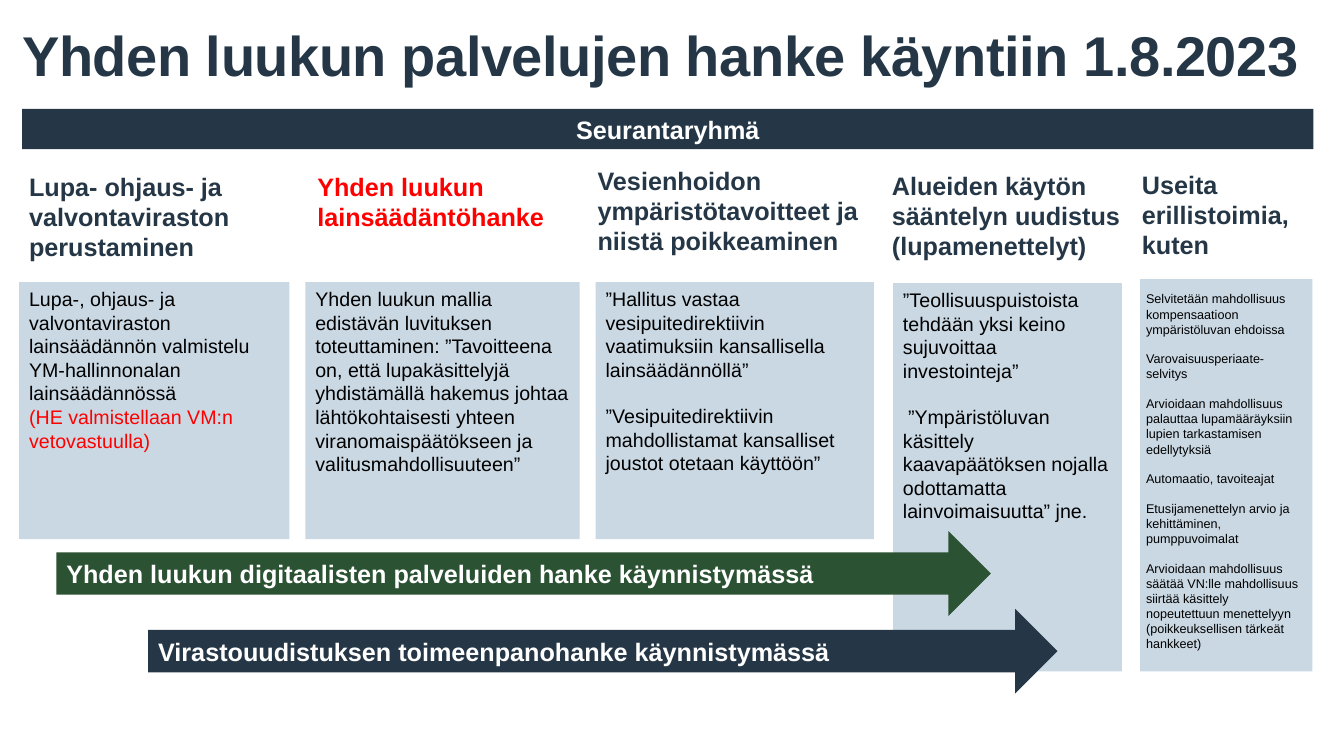
from dataclasses import dataclass
from pptx import Presentation
from pptx import util as u
from pptx.dml.color import RGBColor
from pptx.enum import shapes, text

CELL = 0.1
SLIDE_COLUMNS, SLIDE_ROWS = 133.33, 75
LINE_FACTOR = 1.15


@dataclass(frozen=True)
class Theme:
    font: str = "Arial"
    navy: str = "253746"
    green: str = "2C5234"
    pale: str = "CAD8E3"
    red: str = "FF0000"
    black: str = "000000"
    white: str = "FFFFFF"
    title: int = 40
    heading: int = 18
    body: int = 14
    small: int = 9


THEME = Theme()
INSETS = (1, 0.5, 1, 0.5)

COLUMNS = [
    ((1.9, 16.5, 26.7, 10.1), "Lupa- ohjaus- ja valvontaviraston perustaminen", THEME.navy,
     (1.9, 28, 26.8, 25.5),
     ["Lupa-, ohjaus- ja valvontaviraston lainsäädännön valmistelu "
      "YM-hallinnonalan lainsäädännössä",
      "(HE valmistellaan VM:n vetovastuulla)"],
     {"gap": 0, "accents": {1: THEME.red}}),
    ((30.5, 16.5, 26, 7.1), "Yhden luukun lainsäädäntöhanke", THEME.red,
     (30.3, 28, 27.2, 25.5),
     ["Yhden luukun mallia edistävän luvituksen toteuttaminen: ”Tavoitteena on, "
      "että lupakäsittelyjä yhdistämällä hakemus johtaa lähtökohtaisesti yhteen "
      "viranomaispäätökseen ja valitusmahdollisuuteen”"], {}),
    ((58.3, 15.9, 28.2, 10.1), "Vesienhoidon ympäristötavoitteet ja niistä poikkeaminen",
     THEME.navy, (59.1, 28, 27.6, 25.5),
     ["”Hallitus vastaa vesipuitedirektiivin vaatimuksiin kansallisella lainsäädännöllä”",
      "”Vesipuitedirektiivin mahdollistamat kansalliset joustot otetaan käyttöön”"], {}),
    ((87.5, 16.4, 25.5, 10.1), "Alueiden käytön sääntelyn uudistus (lupamenettelyt)",
     THEME.navy, (88.6, 28.1, 22.7, 38.5),
     ["”Teollisuuspuistoista tehdään yksi keino sujuvoittaa investointeja”",
      "”Ympäristöluvan käsittely kaavapäätöksen nojalla odottamatta "
      "lainvoimaisuutta” jne."], {"indents": {1: 0.5}}),
    ((112.3, 16.3, 17.1, 10.1), "Useita erillistoimia, kuten", THEME.navy,
     (113.1, 27.7, 17.1, 38.9),
     ["Selvitetään mahdollisuus kompensaatioon ympäristöluvan ehdoissa",
      "Varovaisuusperiaate-selvitys",
      "Arvioidaan mahdollisuus palauttaa lupamääräyksiin lupien tarkastamisen edellytyksiä",
      "Automaatio, tavoiteajat",
      "Etusijamenettelyn arvio ja kehittäminen, pumppuvoimalat",
      "Arvioidaan mahdollisuus säätää VN:lle mahdollisuus siirtää käsittely "
      "nopeutettuun menettelyyn (poikkeuksellisen tärkeät hankkeet)"],
     {"size": THEME.small, "insets": (0.6, 1.2, 0.9, 0.5)}),
]

ARROWS = [
    ((5.6, 52.7, 92.7, 8.4), "Yhden luukun digitaalisten palveluiden hanke käynnistymässä",
     THEME.green),
    ((14.7, 60.4, 90.2, 8.4), "Virastouudistuksen toimeenpanohanke käynnistymässä",
     THEME.navy),
]


def grid(cells):
    return u.Inches(cells * CELL)


def apply(target, values):
    for attribute, value in values.items():
        setattr(target, attribute, value)


def write(shape, paragraphs, size, color, bold=False, gap=1, insets=INSETS,
          anchor=text.MSO_ANCHOR.TOP, align=text.PP_ALIGN.LEFT, wrap=True,
          accents={}, indents={}):
    frame = shape.text_frame
    sides = ("margin_left", "margin_top", "margin_right", "margin_bottom")
    apply(frame, {"word_wrap": wrap, "vertical_anchor": anchor,
                  **{side: grid(inset) for side, inset in zip(sides, insets)}})
    for index, wording in enumerate(paragraphs):
        paragraph = frame.add_paragraph() if index else frame.paragraphs[0]
        paragraph.alignment = align
        if index and gap:
            paragraph.space_before = u.Pt(round(gap * size * LINE_FACTOR, 1))
        if index in indents:
            paragraph._p.get_or_add_pPr().set("indent", str(grid(indents[index])))
        run = paragraph.add_run()
        run.text = wording
        apply(run.font, {"name": THEME.font, "size": u.Pt(size), "bold": bold})
        run.font.color.rgb = RGBColor.from_string(accents.get(index, color))
    return frame


def add_block(slide, area, fill, preset=shapes.MSO_SHAPE.RECTANGLE):
    block = slide.shapes.add_shape(preset, *map(grid, area))
    block.shadow.inherit = False
    block.fill.solid()
    block.fill.fore_color.rgb = RGBColor.from_string(fill)
    block.line.fill.background()
    return block


def add_title(slide, area, wording):
    title = slide.shapes.add_textbox(*map(grid, area))
    frame = write(title, [wording], THEME.title, THEME.navy, bold=True,
                  insets=(0, 0, 0, 0), wrap=False)
    headline = frame.paragraphs[0]
    headline.line_spacing = 0.9
    headline.runs[0]._r.get_or_add_rPr().set("spc", "-30")


def add_heading(slide, area, wording, color):
    heading = slide.shapes.add_textbox(*map(grid, area))
    write(heading, [wording], THEME.heading, color, bold=True)


def add_panel(slide, area, paragraphs, style):
    panel = add_block(slide, area, THEME.pale)
    write(panel, paragraphs, color=THEME.black, **{"size": THEME.body, **style})


def add_banner(slide, area, wording, fill, preset=shapes.MSO_SHAPE.RECTANGLE,
               align=text.PP_ALIGN.LEFT):
    banner = add_block(slide, area, fill, preset)
    write(banner, [wording], THEME.heading, THEME.white, bold=True,
          anchor=text.MSO_ANCHOR.MIDDLE, align=align)


def main():
    deck = Presentation()
    apply(deck, {"slide_width": grid(SLIDE_COLUMNS), "slide_height": grid(SLIDE_ROWS)})
    slide = deck.slides.add_slide(deck.slide_layouts[6])
    add_title(slide, (2.2, 2.8, 131.1, 13.1), "Yhden luukun palvelujen hanke käyntiin 1.8.2023")
    add_banner(slide, (2.2, 10.8, 128.1, 4), "Seurantaryhmä", THEME.navy,
               align=text.PP_ALIGN.CENTER)
    for heading_area, heading, color, panel_area, paragraphs, style in COLUMNS:
        add_heading(slide, heading_area, heading, color)
        add_panel(slide, panel_area, paragraphs, style)
    for area, wording, fill in ARROWS:
        add_banner(slide, area, wording, fill, shapes.MSO_SHAPE.RIGHT_ARROW)
    deck.save("out.pptx")


if __name__ == "__main__":
    main()
